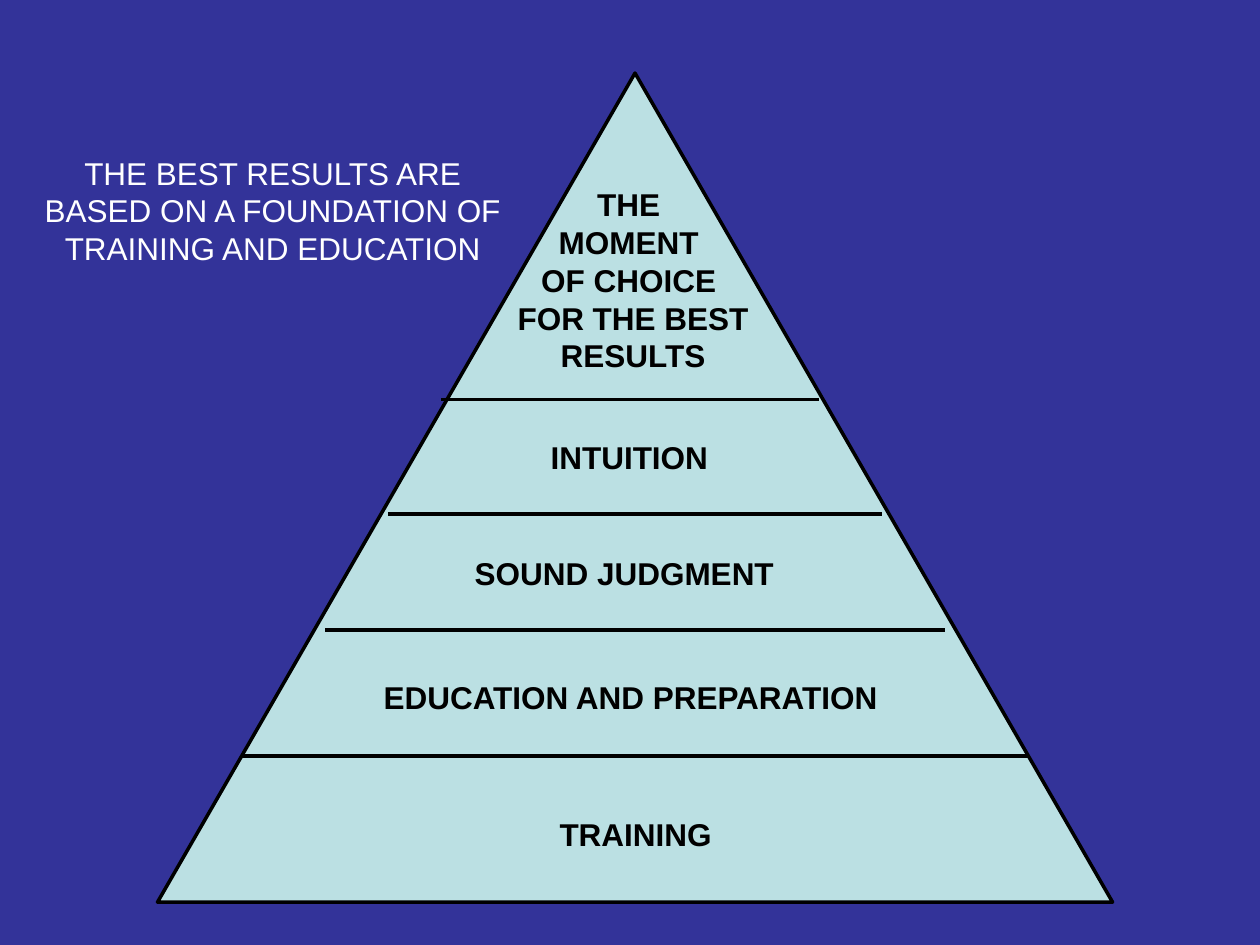
from typing import NamedTuple

from pptx import Presentation
from pptx.dml.color import RGBColor
from pptx.enum.shapes import MSO_CONNECTOR as Wire, MSO_SHAPE as Form
from pptx.enum.text import PP_ALIGN as Align
from pptx.oxml.ns import qn
from pptx.util import Inches, Pt

NAVY, AQUA, BLACK, WHITE = "333399", "BBE0E3", "000000", "FFFFFF"


class Rule(NamedTuple):
    left: float
    right: float
    top: float


class Label(NamedTuple):
    text: str
    left: float
    top: float
    width: float = 6.25
    height: float = 0.4
    color: str = BLACK
    bold: bool = True


RULES = [
    Rule(1.92, 8.17, 6),
    Rule(2.58, 7.5, 5),
    Rule(3.08, 7, 4.08),
    Rule(3.5, 6.5, 3.17),
]

LABELS = [
    Label("TRAINING", 1.92, 6.42),
    Label("EDUCATION AND PREPARATION", 1.88, 5.33),
    Label("SOUND JUDGMENT", 1.83, 4.35),
    Label("INTUITION", 1.87, 3.43),
    Label("THE \nMOMENT \nOF CHOICE \nFOR THE BEST RESULTS", 3.86, 1.42, 2.33, 1.75),
    Label("THE BEST RESULTS ARE BASED ON A FOUNDATION OF TRAINING AND EDUCATION",
          0.25, 1.17, 3.83, 1.01, WHITE, False),
]


def paint(color: str) -> RGBColor:
    return RGBColor.from_string(color)


def outline(shape) -> None:
    shape.line.color.rgb = paint(BLACK)
    shape.line.width = Pt(2)


def draw_peak(slide) -> None:
    peak = slide.shapes.add_shape(
        Form.ISOSCELES_TRIANGLE, Inches(1.25), Inches(0.58), Inches(7.58), Inches(6.58))
    peak.shadow.inherit = False
    peak.fill.solid()
    peak.fill.fore_color.rgb = paint(AQUA)
    outline(peak)


def draw_rule(slide, rule: Rule) -> None:
    top = Inches(rule.top)
    line = slide.shapes.add_connector(
        Wire.STRAIGHT, Inches(rule.left), top, Inches(rule.right), top)
    outline(line)
    props = line._element.spPr
    props.append(props.makeelement(qn("a:effectLst"), {}))


def draw_label(slide, label: Label) -> None:
    box = slide.shapes.add_textbox(
        Inches(label.left), Inches(label.top), Inches(label.width), Inches(label.height))
    frame = box.text_frame
    frame.word_wrap = True
    frame.text = label.text
    for para in frame.paragraphs:
        para.alignment = Align.CENTER
        for run in para.runs:
            run.font.name = "Arial"
            run.font.size = Pt(18)
            run.font.bold = label.bold
            run.font.color.rgb = paint(label.color)


def main() -> None:
    deck = Presentation()
    deck.slide_width, deck.slide_height = Inches(10), Inches(7.5)
    slide = deck.slides.add_slide(deck.slide_layouts[6])
    slide.background.fill.solid()
    slide.background.fill.fore_color.rgb = paint(NAVY)
    draw_peak(slide)
    for rule in RULES:
        draw_rule(slide, rule)
    for label in LABELS:
        draw_label(slide, label)
    deck.save("out.pptx")


if __name__ == "__main__":
    main()
